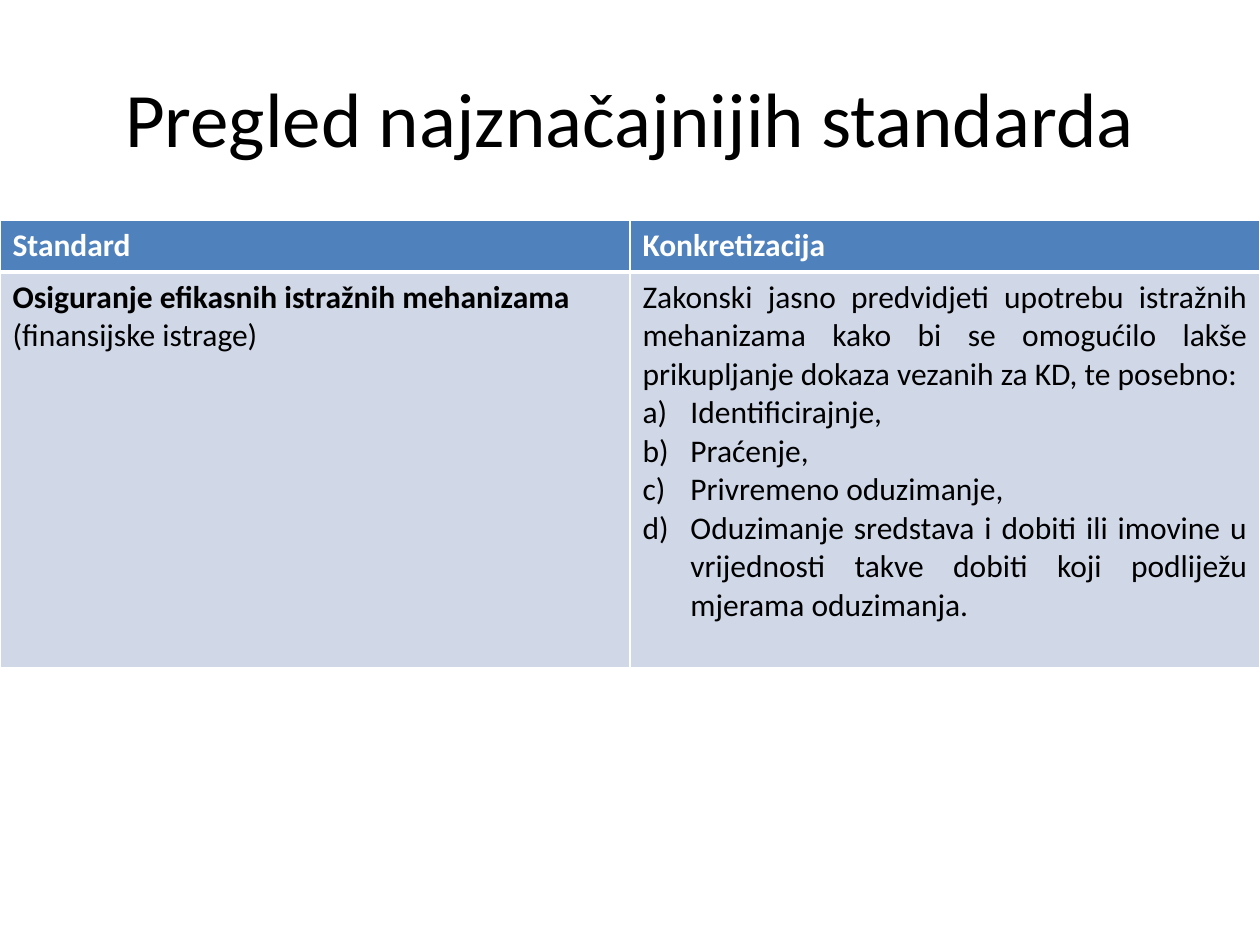
import pptx
import pptx.util
import pptx.dml.color
import pptx.enum.text
import pptx.oxml
import pptx.oxml.ns
from pptx.util import Inches

COLORS = {"text": "000000", "white": "FFFFFF", "header": "4F81BD", "body": "D0D8E8"}
ALIGN = pptx.enum.text.PP_ALIGN
INTRO = ("Zakonski jasno predvidjeti upotrebu istražnih mehanizama kako bi se "
         "omogućilo lakše prikupljanje dokaza vezanih za KD, te posebno:")
MEASURES = [
    "Identificirajnje,",
    "Praćenje,",
    "Privremeno oduzimanje,",
    "Oduzimanje sredstava i dobiti ili imovine u vrijednosti takve dobiti "
    "koji podliježu mjerama oduzimanja.",
]


def rgb(name):
    return pptx.dml.color.RGBColor.from_string(COLORS[name])


def add_text(p, text, size=18, color="text", bold=False, align=None):
    r = p.add_run()
    r.text = text
    r.font.name = "Calibri"
    r.font.size = pptx.util.Pt(size)
    r.font.bold = bold
    r.font.color.rgb = rgb(color)
    if align is not None:
        p.alignment = align


def add_lettering(p):
    pPr = p._p.get_or_add_pPr()
    pPr.set("marL", str(Inches(0.38)))
    pPr.set("indent", str(-Inches(0.38)))
    num = pptx.oxml.ns.qn("a:buAutoNum")
    pPr.append(pPr.makeelement(num, {"type": "alphaLcParenR"}))


def style_cell(cell, fill, top, bottom):
    cell.fill.solid()
    cell.fill.fore_color.rgb = rgb(fill)
    tcPr = cell._tc.get_or_add_tcPr()
    # Borders come before the fill, in this order
    for i, (side, width) in enumerate([("L", 1), ("R", 1), ("T", top), ("B", bottom)]):
        tcPr.insert(i, pptx.oxml.parse_xml(
            f'<a:ln{side} {pptx.oxml.ns.nsdecls("a")} w="{pptx.util.Pt(width)}">'
            f'<a:solidFill><a:srgbClr val="{COLORS["white"]}"/></a:solidFill></a:ln{side}>'))


def add_title(s, text):
    tf = s.shapes.add_textbox(Inches(0.5), Inches(0.3), Inches(9), Inches(1.25)).text_frame
    tf.word_wrap = True
    tf.vertical_anchor = pptx.enum.text.MSO_ANCHOR.MIDDLE
    add_text(tf.paragraphs[0], text, size=44, align=ALIGN.CENTER)


def add_standards_table(s):
    table = s.shapes.add_table(2, 2, Inches(0), Inches(1.75), Inches(10), Inches(3.55)).table
    for row, height in zip(table.rows, (0.41, 3.14)):
        row.height = Inches(height)

    # Header row
    for col, label in enumerate(("Standard", "Konkretizacija")):
        style_cell(table.cell(0, col), "header", top=1, bottom=3)
        style_cell(table.cell(1, col), "body", top=3, bottom=1)
        add_text(table.cell(0, col).text_frame.paragraphs[0], label, color="white", bold=True)

    # Standard
    p = table.cell(1, 0).text_frame.paragraphs[0]
    add_text(p, "Osiguranje efikasnih istražnih mehanizama", bold=True)
    add_text(p, " (finansijske istrage)")

    # Details with lettered measures
    tf = table.cell(1, 1).text_frame
    add_text(tf.paragraphs[0], INTRO, align=ALIGN.JUSTIFY)
    for measure in MEASURES:
        p = tf.add_paragraph()
        add_text(p, measure, align=ALIGN.JUSTIFY)
        add_lettering(p)


def main():
    prs = pptx.Presentation()
    prs.slide_width, prs.slide_height = Inches(10), Inches(7.5)
    s = prs.slides.add_slide(prs.slide_layouts[6])
    add_title(s, "Pregled najznačajnijih standarda")
    add_standards_table(s)
    prs.save("out.pptx")


if __name__ == "__main__":
    main()
